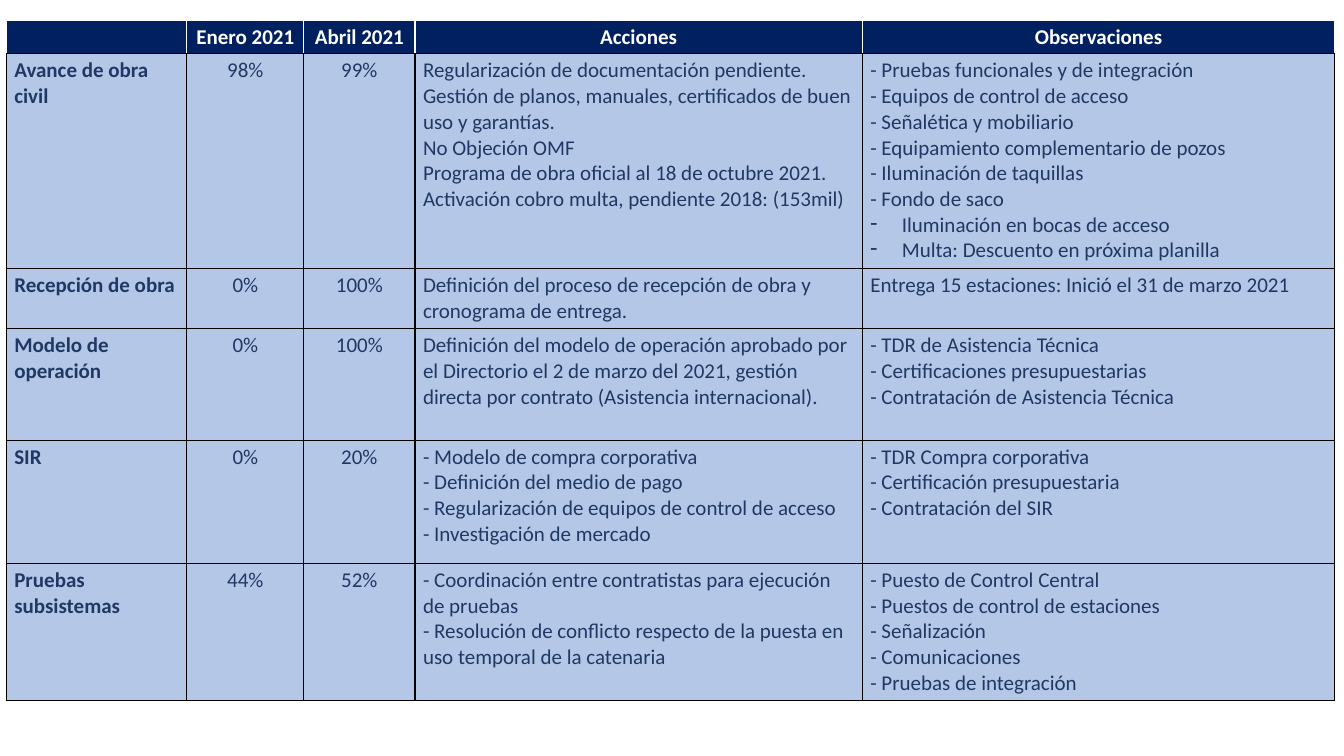
import pptx
import pptx.util
import pptx.dml.color
import pptx.enum.text
import pptx.oxml.ns
from lxml import etree

Pt = pptx.util.Pt
qn = pptx.oxml.ns.qn
ALIGN = pptx.enum.text.PP_ALIGN

COLORS = {
    "header": "002060",
    "body": "B4C7E7",
    "text": "203864",
    "light": "FFFFFF",
    "border": "000000",
}
FONT = "Calibri"
FONT_SIZE = 15
BULLET = "•"
COLUMN_WIDTHS = [129, 83.5, 79.5, 319.5, 337.5]
ROW_HEIGHTS = [24, 153.5, 43, 79.5, 88, 98]
PERCENT_COLUMNS = (1, 2)

HEADER = ["", "Enero 2021", "Abril 2021", "Acciones", "Observaciones"]
ROWS = [
    ["Avance de obra civil", "98%", "99%",
     ["Regularización de documentación pendiente.",
      "Gestión de planos, manuales, certificados de buen uso y garantías.",
      "No Objeción OMF",
      "Programa de obra oficial al 18 de octubre 2021.",
      "Activación cobro multa, pendiente 2018: (153mil)"],
     ["- Pruebas funcionales y de integración",
      "- Equipos de control de acceso",
      "- Señalética y mobiliario",
      "- Equipamiento complementario de pozos",
      "- Iluminación de taquillas",
      "- Fondo de saco",
      BULLET + "Iluminación en bocas de acceso",
      BULLET + "Multa: Descuento en próxima planilla"]],
    ["Recepción de obra", "0%", "100%",
     ["Definición del proceso de recepción de obra y cronograma de entrega."],
     ["Entrega 15 estaciones: Inició el 31 de marzo 2021"]],
    ["Modelo de operación", "0%", "100%",
     ["Definición del modelo de operación aprobado por el Directorio el 2 de marzo "
      "del 2021, gestión directa por contrato (Asistencia internacional)."],
     ["- TDR de Asistencia Técnica",
      "- Certificaciones presupuestarias",
      "- Contratación de Asistencia Técnica"]],
    ["SIR", "0%", "20%",
     ["- Modelo de compra corporativa",
      "- Definición del medio de pago",
      "- Regularización de equipos de control de acceso",
      "- Investigación de mercado"],
     ["- TDR Compra corporativa",
      "- Certificación presupuestaria",
      "- Contratación del SIR"]],
    ["Pruebas subsistemas", "44%", "52%",
     ["- Coordinación entre contratistas para ejecución de pruebas",
      "- Resolución de conflicto respecto de la puesta en uso temporal de la catenaria"],
     ["- Puesto de Control Central",
      "- Puestos de control de estaciones",
      "- Señalización",
      "- Comunicaciones",
      "- Pruebas de integración"]],
]


def rgb(name):
    """Return the named palette colour."""
    return pptx.dml.color.RGBColor.from_string(COLORS[name])


def set_borders(cell, sides):
    """Draw one-point borders, given a colour name for each side."""
    properties = cell._tc.get_or_add_tcPr()
    for side in "LRTB":
        line = etree.SubElement(properties, qn(f"a:ln{side}"), w=str(Pt(1)))
        fill = etree.SubElement(line, qn("a:solidFill"))
        etree.SubElement(fill, qn("a:srgbClr"), val=COLORS[sides[side]])


def add_dash_bullet(para):
    """Give a paragraph a hanging dash bullet."""
    properties = para._p.get_or_add_pPr()
    properties.set("marL", str(Pt(22.5)))
    properties.set("indent", str(-Pt(22.5)))
    etree.SubElement(properties, qn("a:buChar"), char="-")


def fill_cell(cell, lines, fill, color, bold, align):
    """Write the lines of one cell and format them."""
    cell.margin_left = cell.margin_right = Pt(5.75)
    cell.margin_top = cell.margin_bottom = Pt(2.9)
    cell.fill.solid()
    cell.fill.fore_color.rgb = rgb(fill)
    for index, line in enumerate(lines):
        para = cell.text_frame.paragraphs[0] if index == 0 else cell.text_frame.add_paragraph()
        if line.startswith(BULLET):
            add_dash_bullet(para)
        if line:
            para.text = line.removeprefix(BULLET)
        else:
            etree.SubElement(para._p, qn("a:endParaRPr"), sz=str(FONT_SIZE * 100))
        para.alignment = align
        para.font.name = FONT
        para.font.size = Pt(FONT_SIZE)
        para.font.bold = bold
        para.font.color.rgb = rgb(color)


def add_progress_table(page, left, top):
    """Place the progress table with its top left corner at the given point."""
    frame = page.shapes.add_table(
        len(ROW_HEIGHTS), len(COLUMN_WIDTHS), Pt(left), Pt(top),
        Pt(sum(COLUMN_WIDTHS)), Pt(sum(ROW_HEIGHTS)))
    table = frame.table
    table.horz_banding = False
    for column, width in zip(table.columns, COLUMN_WIDTHS):
        column.width = Pt(width)
    for row, height in zip(table.rows, ROW_HEIGHTS):
        row.height = Pt(height)
    header_sides = dict.fromkeys("LRT", "light") | {"B": "border"}
    body_sides = dict.fromkeys("LRTB", "border")
    for column, title in enumerate(HEADER):
        cell = table.cell(0, column)
        set_borders(cell, header_sides)
        fill_cell(cell, [title], "header", "light", True, ALIGN.CENTER)
    for row, entries in enumerate(ROWS, start=1):
        for column, entry in enumerate(entries):
            cell = table.cell(row, column)
            lines = [entry] if isinstance(entry, str) else entry
            align = ALIGN.CENTER if column in PERCENT_COLUMNS else ALIGN.LEFT
            set_borders(cell, body_sides)
            fill_cell(cell, lines, "body", "text", column == 0, align)


def main():
    """Build and save the deck."""
    deck = pptx.Presentation()
    deck.slide_width, deck.slide_height = Pt(960), Pt(540)
    page = deck.slides.add_slide(deck.slide_layouts[6])
    add_progress_table(page, 4.5, 14.25)
    deck.save("out.pptx")


if __name__ == "__main__":
    main()
